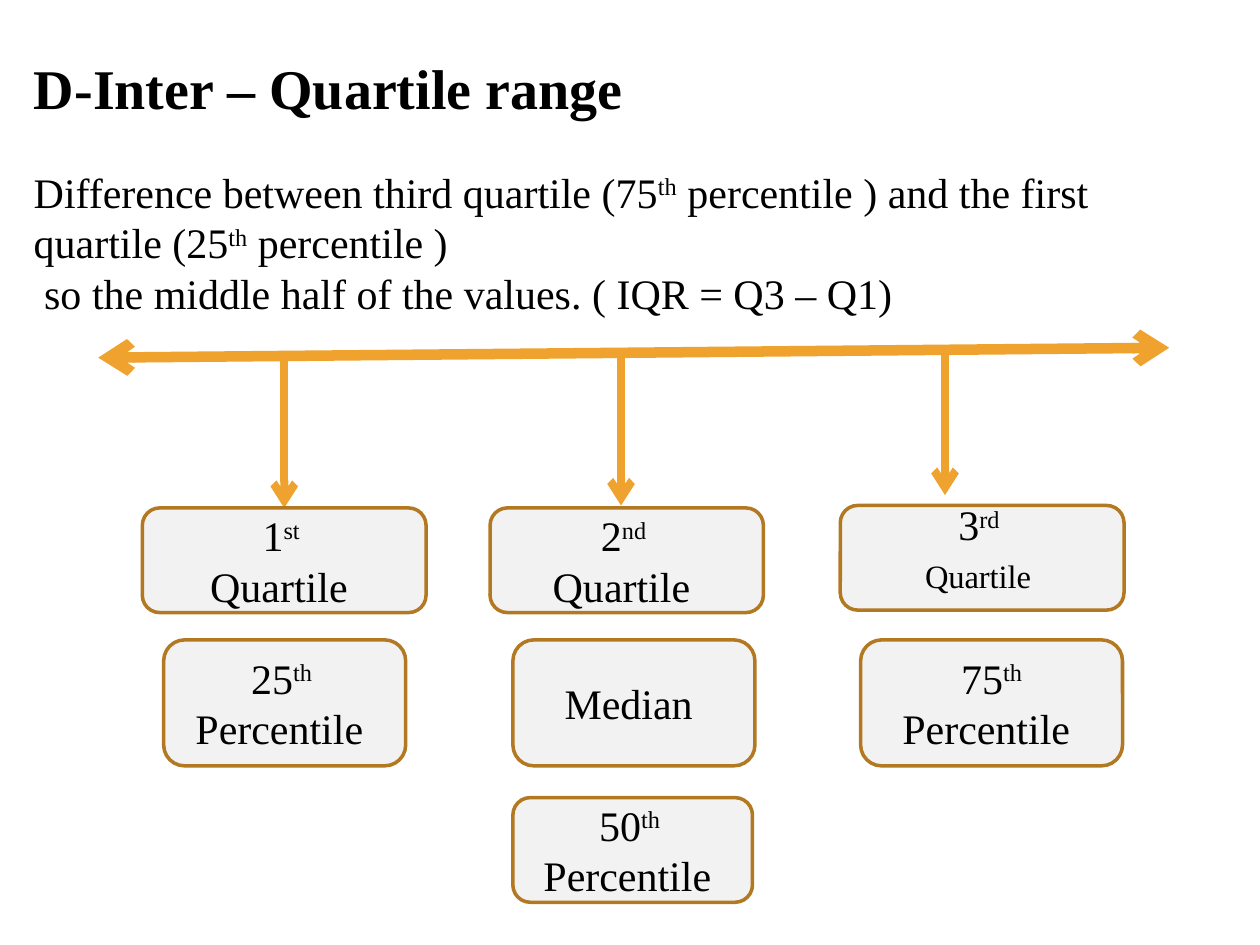
import pptx
import pptx.dml.color
import pptx.enum.shapes
import pptx.enum.text
import pptx.util
from dataclasses import dataclass
from lxml import etree
from pptx.util import Cm, Pt

ALIGN = pptx.enum.text.PP_ALIGN
ANCHOR = pptx.enum.text.MSO_ANCHOR


def rgb(code):
    return pptx.dml.color.RGBColor.from_string(code)


@dataclass(frozen=True)
class Theme:
    face: str = "Times New Roman"
    ink: str = "000000"
    gold: str = "F0A22E"
    edge: str = "B27822"
    pale: str = "F2F2F2"
    head: float = 32
    body: float = 24
    axis: float = 6
    drop: float = 4.5
    rim: float = 2


THEME = Theme()


def style(run, size, bold=False):
    font = run.font
    font.name, font.size, font.bold = THEME.face, Pt(size), bold
    font.color.rgb = rgb(THEME.ink)


def write(frame, text, align):
    """Fill a frame; the parts between carets are raised."""
    frame.word_wrap = True
    for num, line in enumerate(text.split("\n")):
        para = frame.add_paragraph() if num else frame.paragraphs[0]
        para.alignment = align
        for pos, part in enumerate(line.split("^")):
            if not part:
                continue
            run = para.add_run()
            run.text = part
            style(run, THEME.body)
            if pos % 2:
                run.font._element.set("baseline", "30000")


def add_title(slide, text):
    title = slide.shapes.title
    title.left, title.top = Cm(0.43), Cm(0.95)
    title.width, title.height = Cm(23.93), Cm(1.6)
    frame = title.text_frame
    frame.text = text
    frame.auto_size = pptx.enum.text.MSO_AUTO_SIZE.NONE
    frame.vertical_anchor = ANCHOR.TOP
    para = frame.paragraphs[0]
    para.alignment = ALIGN.LEFT
    style(para.runs[0], THEME.head, True)


def add_text(slide, text, left, top, width, height):
    area = slide.shapes.add_textbox(Cm(left), Cm(top), Cm(width), Cm(height))
    write(area.text_frame, text, ALIGN.LEFT)


def add_box(slide, text, left, top, width, height):
    kind = pptx.enum.shapes.MSO_SHAPE.ROUNDED_RECTANGLE
    box = slide.shapes.add_shape(kind, Cm(left), Cm(top), Cm(width), Cm(height))
    box.shadow.inherit = False
    box.fill.solid()
    box.fill.fore_color.rgb = rgb(THEME.pale)
    box.line.color.rgb = rgb(THEME.edge)
    box.line.width = Pt(THEME.rim)
    box.text_frame.vertical_anchor = ANCHOR.MIDDLE
    write(box.text_frame, text, ALIGN.CENTER)
    return box


def add_arrow(slide, start, end, width, both=False):
    kind = pptx.enum.shapes.MSO_CONNECTOR.STRAIGHT
    ends = [Cm(value) for value in (*start, *end)]
    arrow = slide.shapes.add_connector(kind, *ends)
    arrow.line.color.rgb = rgb(THEME.gold)
    arrow.line.width = Pt(width)
    line = arrow.line._get_or_add_ln()
    for tag in ("headEnd", "tailEnd") if both else ("tailEnd",):
        tip = etree.SubElement(line, pptx.oxml.ns.qn("a:" + tag))
        tip.set("type", "arrow")
    etree.SubElement(arrow._element.spPr, pptx.oxml.ns.qn("a:effectLst"))
    return arrow


def main():
    deck = pptx.Presentation()
    deck.slide_width, deck.slide_height = Cm(25.4), Cm(19.05)
    slide = deck.slides.add_slide(deck.slide_layouts[5])

    add_title(slide, "D-Inter – Quartile range")
    add_text(slide, "Difference between third quartile (75^th^ percentile ) "
             "and the first quartile (25^th^ percentile )\n"
             " so the middle half of the values. ( IQR = Q3 – Q1)",
             0.43, 3.23, 23.93, 3.5)

    add_arrow(slide, (1.98, 7.21), (23.57, 7.01), THEME.axis, True)
    first = add_arrow(slide, (5.73, 7.26), (5.73, 10.24), THEME.drop)
    add_arrow(slide, (12.52, 7.01), (12.52, 10.19), THEME.drop)
    add_arrow(slide, (19.05, 7.01), (19.05, 9.98), THEME.drop)

    third = add_box(slide, "3^rd ^\n^Quartile ^", 16.94, 10.19, 5.72, 2.11)
    third.text_frame.paragraphs[1].runs[0].font.size = Pt(THEME.head)
    add_box(slide, "2^nd ^\nQuartile ", 9.88, 10.24, 5.51, 2.11)
    low = add_box(slide, "1^st ^\nQuartile ", 2.87, 10.24, 5.72, 2.11)
    first.end_connect(low, 0)

    row, tall = 12.9, 2.54
    add_box(slide, "25^th ^\nPercentile ", 3.3, row, 4.88, tall)
    add_box(slide, "Median ", 10.34, row, 4.88, tall)
    add_box(slide, "75^th^ Percentile ", 17.35, row, 5.28, tall)
    add_box(slide, "50^th ^\nPercentile ", 10.34, 16.08, 4.83, 2.11)

    deck.save("out.pptx")


if __name__ == "__main__":
    main()
